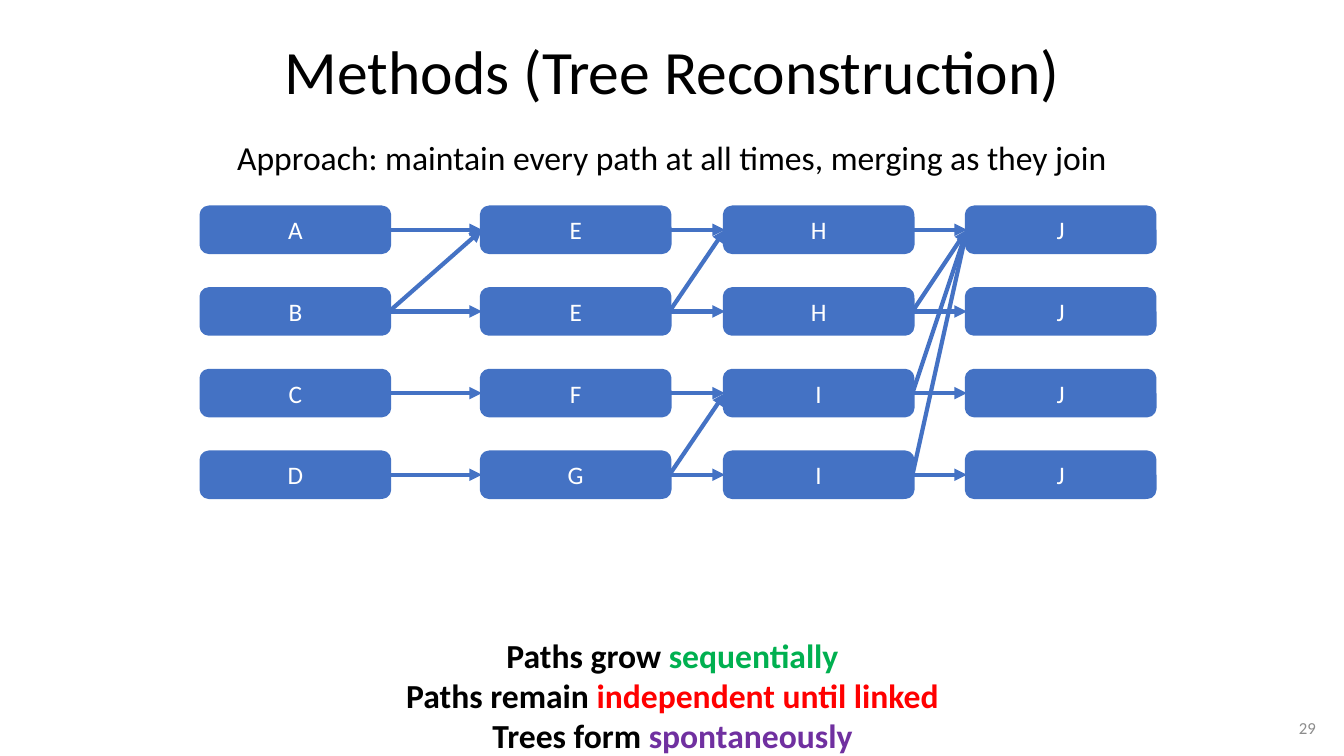
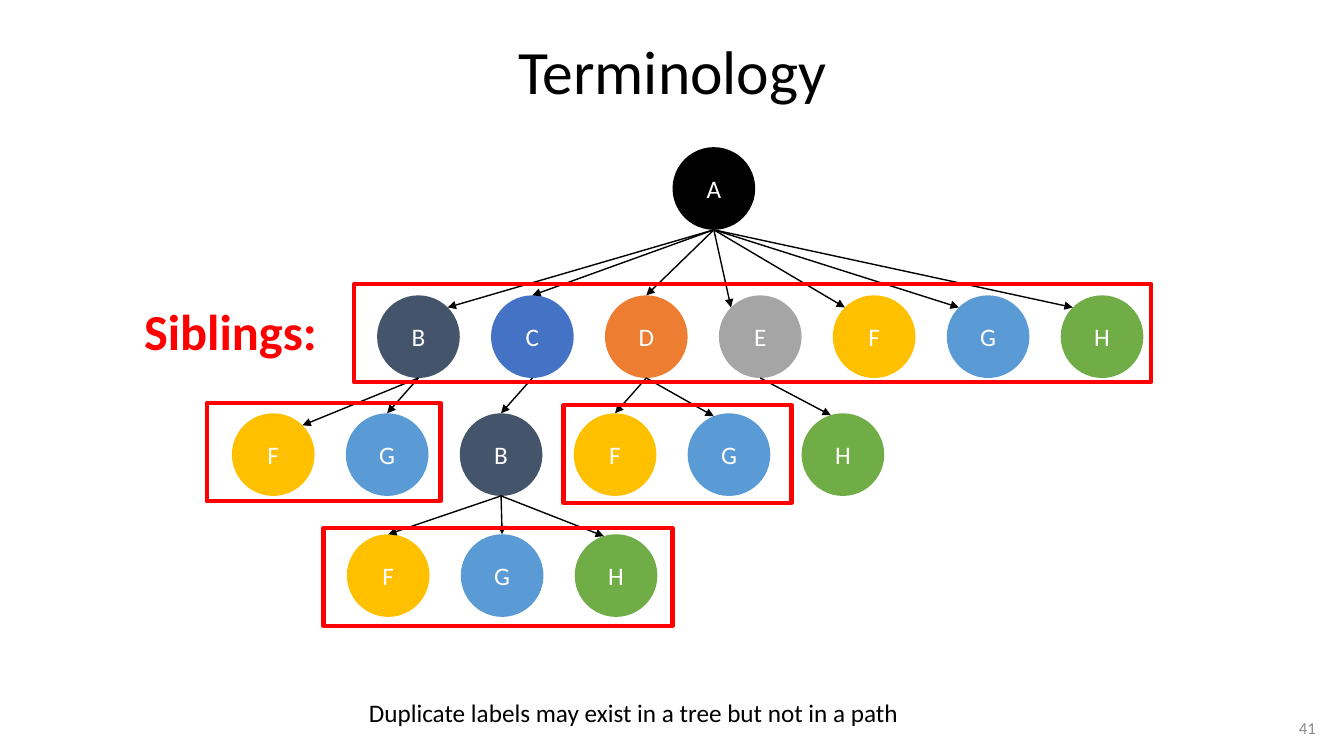
"""Build two slides on tree reconstruction and tree terminology."""
from math import sqrt

from lxml.etree import SubElement
from pptx import Presentation
from pptx.dml.color import RGBColor
from pptx.enum.shapes import MSO_CONNECTOR, MSO_SHAPE as SHAPE
from pptx.enum.text import MSO_ANCHOR as ANCHOR, PP_ALIGN as ALIGN
from pptx.oxml.ns import qn
from pptx.util import Pt

PX = 9144
FONT = "Calibri"
BLACK, WHITE, RED, BLUE = "000000", "FFFFFF", "FF0000", "4472C4"
rgb = RGBColor.from_string


def add_shape(s, kind, box, fill=None, line=None, text=""):
    sp = s.shapes.add_shape(kind, *[v * PX for v in box])
    sp.shadow.inherit = False
    if fill:
        sp.fill.solid()
        sp.fill.fore_color.rgb = rgb(fill)
    else:
        sp.fill.background()
    if line:
        sp.line.color.rgb = rgb(line)
        sp.line.width = Pt(3)
    else:
        sp.line.fill.background()
    if text:
        tf = sp.text_frame
        tf.text = text
        tf.vertical_anchor = ANCHOR.MIDDLE
        p = tf.paragraphs[0]
        p.alignment = ALIGN.CENTER
        font = p.runs[0].font
        font.name, font.size, font.color.rgb = FONT, Pt(18), rgb(WHITE)
    return sp


def add_arrow(s, ends, color, width):
    arrow = s.shapes.add_connector(MSO_CONNECTOR.STRAIGHT, *[v * PX for v in ends])
    arrow.line.color.rgb = rgb(color)
    arrow.line.width = Pt(width)
    SubElement(arrow.line._get_or_add_ln(), qn("a:tailEnd"), type="triangle")
    SubElement(arrow._element.spPr, qn("a:effectLst"))
    return arrow


prs = Presentation()
prs.slide_width, prs.slide_height = 1333 * PX, 750 * PX

for title in ("Methods (Tree Reconstruction)", "Terminology"):
    s = prs.slides.add_slide(prs.slide_layouts[5])
    sp = s.shapes.title
    sp.left, sp.top, sp.width, sp.height = [v * PX for v in (92, 1, 1150, 145)]
    tf = sp.text_frame
    tf.text = title
    tf.vertical_anchor = ANCHOR.MIDDLE
    p = tf.paragraphs[0]
    p.alignment, p.line_spacing = ALIGN.CENTER, 0.9
    font = p.runs[0].font
    font.name, font.size, font.color.rgb = FONT, Pt(44), rgb(BLACK)

methods, terms = prs.slides

boxes = {}
for col, (x, labels) in enumerate(zip((200, 478, 719, 959), ("ABCD", "EEFG", "HHII", "JJJJ"))):
    for row, label in enumerate(labels):
        box = (x, 206 + 81 * row, 186, 44)
        boxes[col, row] = add_shape(methods, SHAPE.ROUNDED_RECTANGLE, box, BLUE, BLUE, label)

steps = [(col, row, row) for col in range(3) for row in range(4)]
merges = [(0, 1, 0), (1, 1, 0), (1, 3, 2), (2, 1, 0), (2, 2, 0), (2, 3, 0)]
for col, start, end in steps + merges:
    arrow = add_arrow(methods, (0, 0, 0, 0), BLUE, 3)
    arrow.begin_connect(boxes[col, start], 3)
    arrow.end_connect(boxes[col + 1, end], 1)

SIZE, RADIUS, PITCH = 82, 41, 113
COLORS = {"A": BLACK, "B": "44546A", "C": BLUE, "D": "ED7D31",
          "E": "A5A5A5", "F": "FFC000", "G": "5B9BD5", "H": "70AD47"}
levels = [(667, 146, "A"), (374, 293, "BCDEFGH"), (230, 410, "FGBFGH"), (344, 530, "FGH")]
for left, top, labels in levels:
    for i, label in enumerate(labels):
        box = (left + PITCH * i, top, SIZE, SIZE)
        add_shape(terms, SHAPE.OVAL, box, COLORS[label], text=label)

# Each entry: parent level, parent index, child index, sideways offset of the arrow tip
edges = [(0, 0, 0, 29), (0, 0, 1, 0), (0, 0, 2, 0)]
edges += [(0, 0, child, -29) for child in range(3, 7)]
edges += [(1, 0, 0, 29), (1, 0, 1, 0), (1, 1, 2, 0), (1, 2, 3, 0), (1, 2, 4, -15), (1, 3, 5, -12)]
edges += [(2, 2, 0, 0), (2, 2, 1, 0), (2, 2, 2, -12)]
for level, parent, child, offset in edges:
    (x1, y1, _), (x2, y2, _) = levels[level:level + 2]
    drop = round(RADIUS - sqrt(RADIUS ** 2 - offset ** 2))
    ends = (x1 + PITCH * parent + RADIUS, y1 + SIZE,
            x2 + PITCH * child + RADIUS + offset, y2 + drop)
    add_arrow(terms, ends, BLACK, 1)

for x, y, w in ((351, 282, 791), (205, 400, 232), (559, 402, 226), (321, 524, 346)):
    add_shape(terms, SHAPE.RECTANGLE, (x, y, w, 97), line=RED)

approach = [[("Approach: maintain every path at all times, merging as they join", BLACK)]]
summary = [[("Paths grow ", BLACK), ("sequentially", "00B050")],
           [("Paths remain ", BLACK), ("independent until linked", RED)],
           [("Trees form ", BLACK), ("spontaneously", "7030A0")]]
note = [[("Duplicate labels may exist in a tree but not in a path", BLACK)]]
number_box, gray = (1015, 702, 300, 40), "8C8C8C"
texts = [
    (methods, (221, 131, 891, 50), 24, False, ALIGN.CENTER, approach),
    (methods, (390, 624, 554, 131), 24, True, ALIGN.CENTER, summary),
    (methods, number_box, 12, False, ALIGN.RIGHT, [[("29", gray)]]),
    (terms, (133, 292, 205, 71), 36, True, ALIGN.LEFT, [[("Siblings:", RED)]]),
    (terms, (356, 687, 552, 40), 18, False, ALIGN.LEFT, note),
    (terms, number_box, 12, False, ALIGN.RIGHT, [[("41", gray)]]),
]
for s, box, size, bold, align, lines in texts:
    tf = s.shapes.add_textbox(*[v * PX for v in box]).text_frame
    tf.word_wrap = True
    tf.vertical_anchor = ANCHOR.MIDDLE
    for i, line in enumerate(lines):
        p = tf.add_paragraph() if i else tf.paragraphs[0]
        p.alignment = align
        for text, color in line:
            r = p.add_run()
            r.text = text
            r.font.name, r.font.size, r.font.bold = FONT, Pt(size), bold
            r.font.color.rgb = rgb(color)

prs.save("out.pptx")
